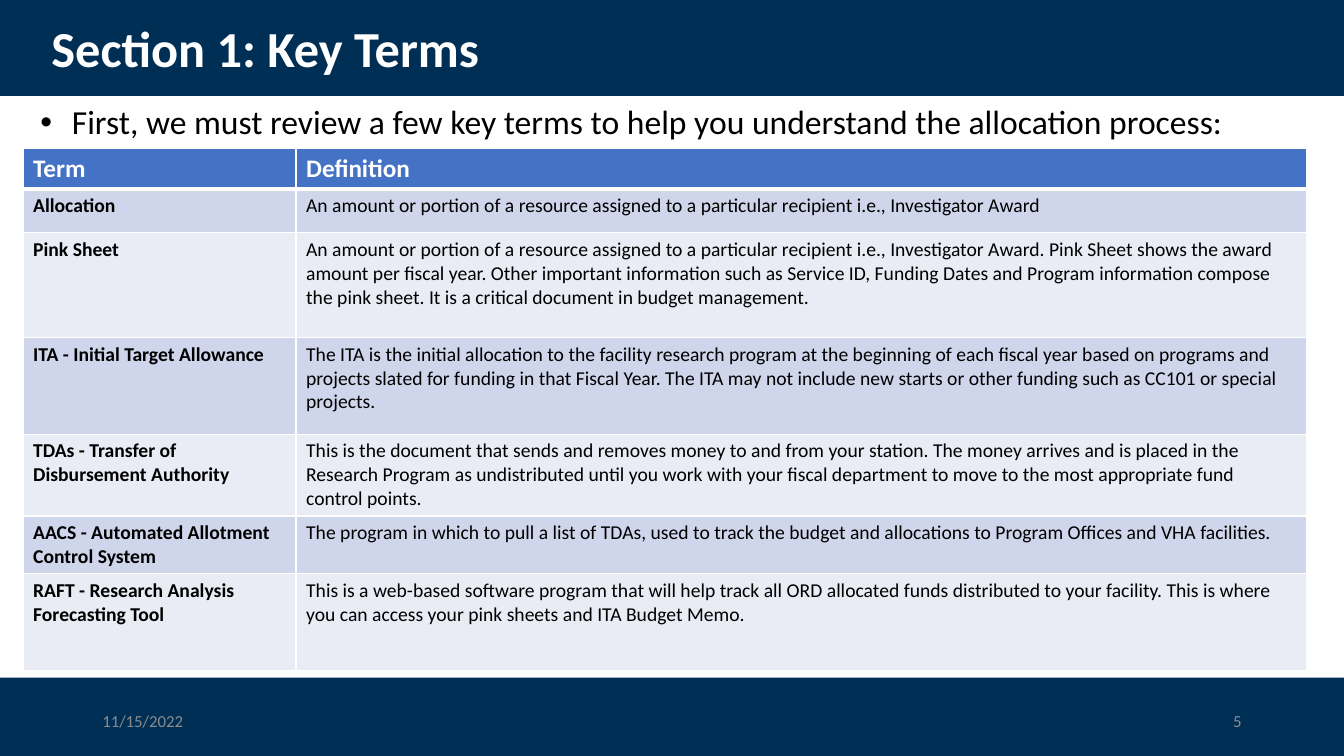
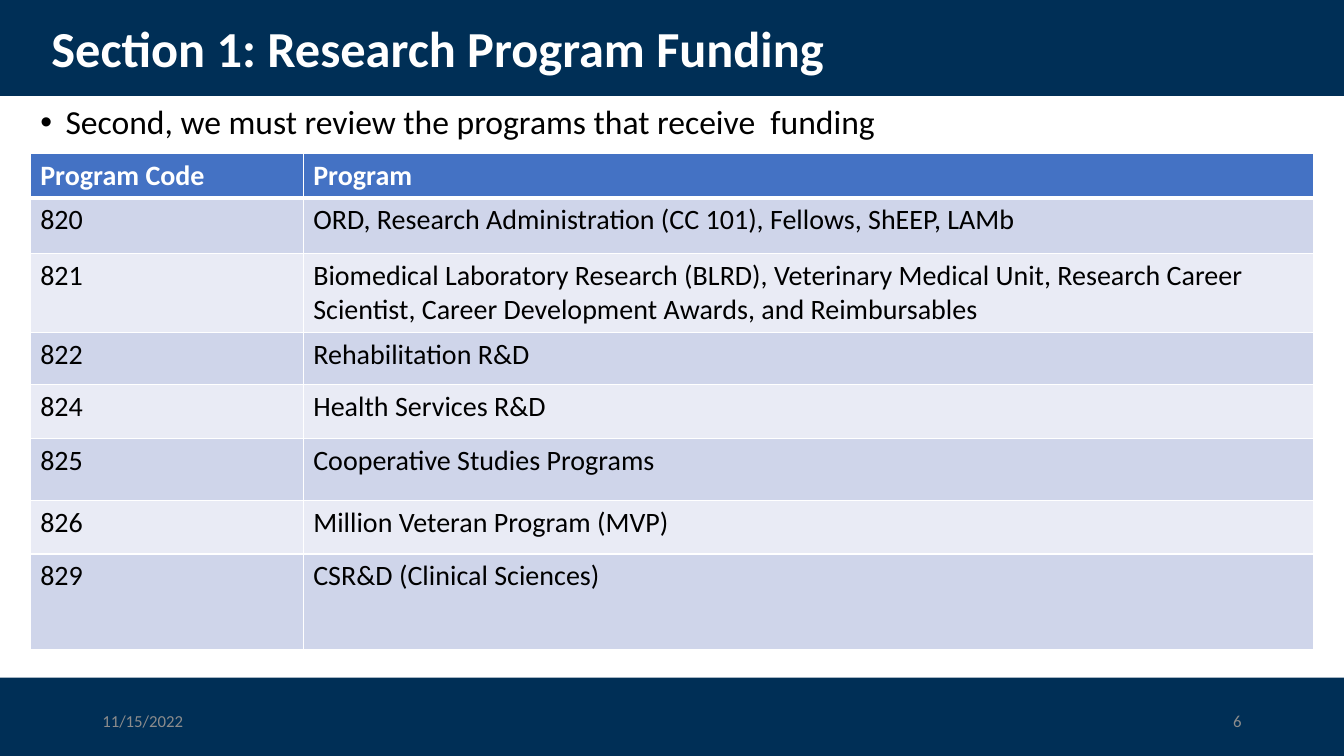
from lxml.etree import SubElement
from pptx import Presentation
from pptx.dml.color import RGBColor
from pptx.enum.shapes import MSO_SHAPE as SHAPE
from pptx.enum.text import MSO_ANCHOR as ANCHOR, MSO_AUTO_SIZE as AUTO, PP_ALIGN as ALIGN
from pptx.oxml.ns import qn
from pptx.util import Pt

# Content
DATE = "11/15/2022"
FIRST_PAGE = 5
SLIDES = [
    dict(
        title="Section 1: Key Terms",
        lead="First, we must review a few key terms to help you understand the allocation process:",
        lead_indent=22.5, left=16.5, top=106, header_size=18, body_size=14, bold_first=True,
        heights=[28.5, 31, 75, 69, 58.5, 41, 69],
        rows=[
            ("Term", "Definition"),
            ("Allocation",
             "An amount or portion of a resource assigned to a particular recipient i.e., "
             "Investigator Award"),
            ("Pink Sheet",
             "An amount or portion of a resource assigned to a particular recipient i.e., "
             "Investigator Award. Pink Sheet shows the award amount per fiscal year. Other "
             "important information such as Service ID, Funding Dates and Program information "
             "compose the pink sheet. It is a critical document in budget management."),
            ("ITA - Initial Target Allowance",
             "The ITA is the initial allocation to the facility research program at the beginning "
             "of each fiscal year based on programs and projects slated for funding in that Fiscal "
             "Year. The ITA may not include new starts or other funding such as CC101 or special "
             "projects."),
            ("TDAs - Transfer of Disbursement Authority",
             "This is the document that sends and removes money to and from your station. The money "
             "arrives and is placed in the Research Program as undistributed until you work with "
             "your fiscal department to move to the most appropriate fund control points."),
            ("AACS - Automated Allotment Control System",
             "The program in which to pull a list of TDAs, used to track the budget and allocations "
             "to Program Offices and VHA facilities."),
            ("RAFT - Research Analysis Forecasting Tool",
             "This is a web-based software program that will help track all ORD allocated funds "
             "distributed to your facility. This is where you can access your pink sheets and ITA "
             "Budget Memo."),
        ]),
    dict(
        title="Section 1: Research Program Funding",
        lead="Second, we must review the programs that receive  funding",
        lead_indent=18, left=21.6, top=109.5, header_size=20, body_size=20, bold_first=False,
        heights=[31.5, 40, 56.5, 37, 38.5, 44.5, 38, 68.5],
        rows=[
            ("Program Code", "Program"),
            ("820", "ORD, Research Administration (CC 101), Fellows, ShEEP, LAMb"),
            ("821", "Biomedical Laboratory Research (BLRD), Veterinary Medical Unit, Research Career "
                    "Scientist, Career Development Awards, and Reimbursables"),
            ("822", "Rehabilitation R&D"),
            ("824", "Health Services R&D"),
            ("825", "Cooperative Studies Programs"),
            ("826", "Million Veteran Program (MVP)"),
            ("829", "CSR&D (Clinical Sciences)"),
        ]),
]

# Shared look
FONT = "Calibri"
NAVY = RGBColor(0x00, 0x2F, 0x56)
BLUE = RGBColor(0x44, 0x72, 0xC4)
STRIPES = [RGBColor(0xE9, 0xEB, 0xF5), RGBColor(0xCF, 0xD5, 0xEA)]
WHITE = RGBColor(0xFF, 0xFF, 0xFF)
BLACK = RGBColor(0, 0, 0)
GREY = RGBColor(0x8C, 0x8C, 0x8C)
WIDTH, HEIGHT = 960, 540
COLUMNS = [195, 721.5]
BANDS = [(0, 68.5), (484, 56)]
TITLE_BOX = (29.5, 8.5, 856, 55.5)
LEAD_BOX = (21.6, 72, 927.5, 395)
DATE_BOX = (66, 500.5, 216, 28.75)
PAGE_BOX = (678, 500.5, 216, 28.75)


def place(shape, box):
    shape.left, shape.top, shape.width, shape.height = map(Pt, box)


def style(p, size, color, bold=False):
    p.font.name, p.font.size, p.font.bold = FONT, Pt(size), bold
    p.font.color.rgb = color


def add_bands(s, layout):
    """Draw the navy bands and move them behind the layout's placeholders."""
    for i, (top, height) in enumerate(BANDS):
        band = s.shapes.add_shape(SHAPE.RECTANGLE, 0, Pt(top), Pt(WIDTH), Pt(height))
        band.shadow.inherit = False
        band.fill.solid()
        band.fill.fore_color.rgb = NAVY
        band.line.fill.background()
        layout.shapes.element.insert(2 + i, band.element)


def fill_placeholder(shape, text, size, color, bold, anchor):
    tf = shape.text_frame
    tf.text = text
    tf.auto_size = AUTO.NONE
    tf.vertical_anchor = anchor
    p = tf.paragraphs[0]
    p.alignment, p.line_spacing, p.space_before = ALIGN.LEFT, 0.9, Pt(0)
    style(p, size, color, bold)
    return p


def add_footer(s, box, text, align):
    tf = s.shapes.add_textbox(*map(Pt, box)).text_frame
    tf.word_wrap = True
    tf.vertical_anchor = ANCHOR.MIDDLE
    p = tf.paragraphs[0]
    p.text, p.alignment = text, align
    style(p, 12, GREY)


def set_borders(cell, row):
    tcPr = cell._tc.get_or_add_tcPr()
    thick = {0: "lnB", 1: "lnT"}.get(row)
    for side in ("lnL", "lnR", "lnT", "lnB"):
        ln = SubElement(tcPr, qn("a:" + side), w=str(Pt(3 if side == thick else 1)))
        SubElement(SubElement(ln, qn("a:solidFill")), qn("a:srgbClr"), val=str(WHITE))


def add_terms_table(s, data):
    rows, heights = data["rows"], data["heights"]
    frame = s.shapes.add_table(len(rows), len(COLUMNS), Pt(data["left"]), Pt(data["top"]),
                               Pt(sum(COLUMNS)), Pt(sum(heights)))
    table = frame.table
    for column, width in zip(table.columns, COLUMNS):
        column.width = Pt(width)
    for r, (texts, height) in enumerate(zip(rows, heights)):
        table.rows[r].height = Pt(height)
        for c, text in enumerate(texts):
            cell = table.cell(r, c)
            cell.text = text
            set_borders(cell, r)
            cell.fill.solid()
            cell.fill.fore_color.rgb = STRIPES[r % 2] if r else BLUE
            p = cell.text_frame.paragraphs[0]
            if r == 0:
                style(p, data["header_size"], WHITE, True)
            else:
                style(p, data["body_size"], BLACK, data["bold_first"] and c == 0)


def main():
    prs = Presentation()
    prs.slide_width, prs.slide_height = Pt(WIDTH), Pt(HEIGHT)
    layout = prs.slide_layouts[1]
    for shape, box in zip(layout.placeholders, (TITLE_BOX, LEAD_BOX)):
        place(shape, box)

    for i, data in enumerate(SLIDES):
        s = prs.slides.add_slide(layout)
        if i == 0:
            add_bands(s, layout)
        # Title and lead bullet
        title, lead = s.placeholders
        fill_placeholder(title, data["title"], 36, WHITE, True, ANCHOR.MIDDLE)
        p = fill_placeholder(lead, data["lead"], 24, BLACK, False, ANCHOR.TOP)
        pPr = p._p.get_or_add_pPr()
        pPr.set("marL", str(Pt(data["lead_indent"])))
        pPr.set("indent", str(-Pt(data["lead_indent"])))
        # Table and footer
        add_terms_table(s, data)
        add_footer(s, PAGE_BOX, str(FIRST_PAGE + i), ALIGN.RIGHT)
        add_footer(s, DATE_BOX, DATE, ALIGN.LEFT)

    prs.save("out.pptx")


if __name__ == "__main__":
    main()
